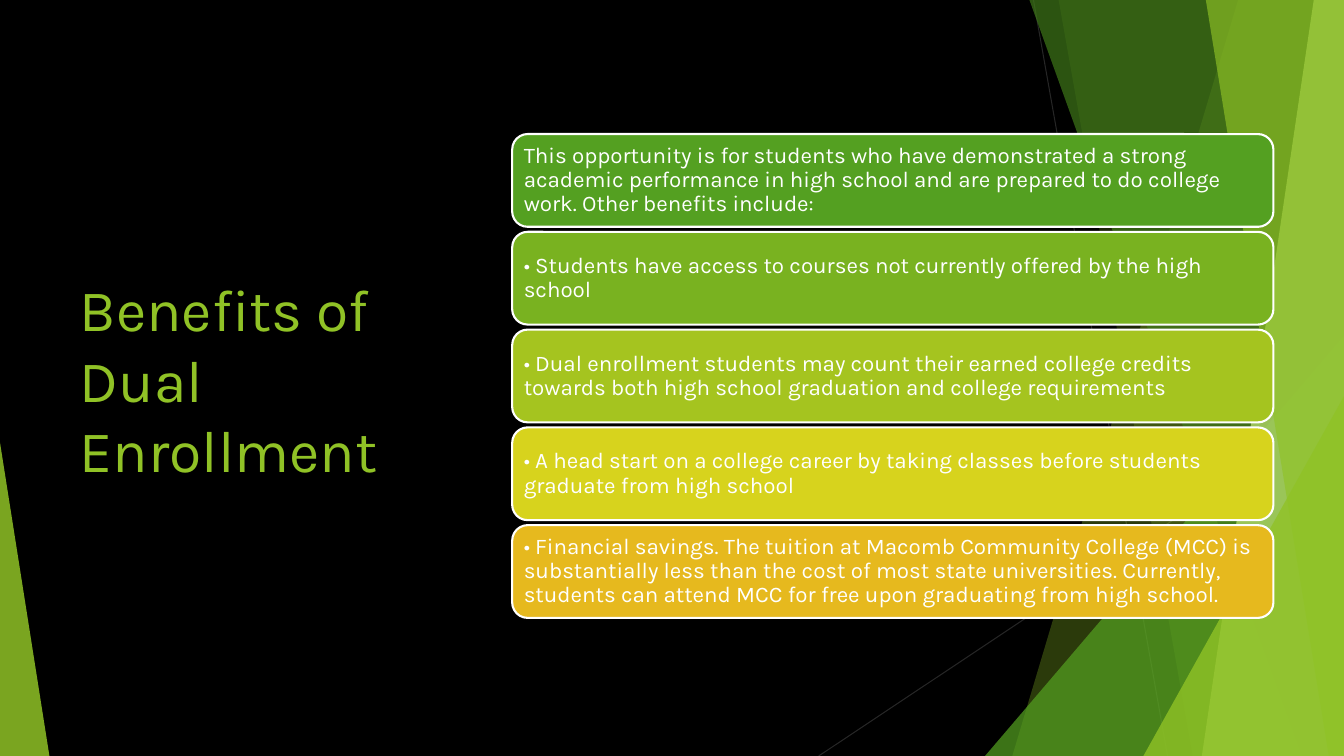
from dataclasses import dataclass

from lxml.etree import SubElement
from pptx import Presentation
from pptx.dml.color import RGBColor as Rgb
from pptx.enum.shapes import MSO_CONNECTOR as Link, MSO_SHAPE as Kind
from pptx.enum.text import MSO_ANCHOR as Anchor, MSO_AUTO_SIZE as Auto, PP_ALIGN as Align
from pptx.oxml.ns import qn
from pptx.shapes.base import BaseShape
from pptx.slide import Slide
from pptx.text.text import TextFrame
from pptx.util import Emu, Pt

SCALE = 9144
WIDE, HIGH = 1333, 750
FONT = "Karla"
HUES = {
    "black": "000000",
    "white": "FFFFFF",
    "gray": "262626",
    "lime": "90C226",
    "green": "54A021",
    "forest": "3F7819",
    "pale": "C0E474",
    "leaf": "79B220",
    "olive": "A5C41F",
    "yellow": "D7D31D",
    "gold": "E6B91E",
}


@dataclass
class Ray:
    x1: int
    y1: int
    x2: int
    y2: int


@dataclass
class Panel:
    top: int
    base: int
    hue: str
    alpha: int


@dataclass
class Wedge:
    left: int
    top: int
    width: int
    apex: int
    hue: str
    alpha: int


@dataclass
class Card:
    hue: str
    text: str


DECOR = [
    Ray(1025, 0, 1158, HIGH),
    Ray(WIDE, 403, 812, HIGH),
    Panel(1228, 1004, "lime", 30),
    Panel(1050, 1183, "lime", 20),
    Wedge(977, 333, 356, 1, "green", 72),
    Panel(1021, 1291, "forest", 70),
    Panel(1303, 1192, "pale", 70),
    Panel(1196, 1318, "lime", 65),
    Wedge(1134, 393, 199, 1, "lime", 80),
    Wedge(0, 439, 49, 0, "lime", 85),
]

CARDS = [
    Card("green", "This opportunity is for students who have demonstrated a strong academic "
         "performance in high school and are prepared to do college work. Other benefits include:"),
    Card("leaf", "• Students have access to courses not currently offered by the high school"),
    Card("olive", "• Dual enrollment students may count their earned college credits towards "
         "both high school graduation and college requirements"),
    Card("yellow", "• A head start on a college career by taking classes before students "
         "graduate from high school"),
    Card("gold", "• Financial savings. The tuition at Macomb Community College (MCC) is "
         "substantially less than the cost of most state universities. Currently, students "
         "can attend MCC for free upon graduating from high school."),
]
CARD_X, CARD_Y, CARD_W, CARD_H, PITCH = 508, 133, 755, 92, 97
INSET = 7


def px(count: int) -> Emu:
    return Emu(count * SCALE)


def color(hue: str) -> Rgb:
    return Rgb.from_string(HUES[hue])


def paint(shape: BaseShape, hue: str, alpha: int = 100) -> None:
    shape.shadow.inherit = False
    shape.fill.solid()
    shape.fill.fore_color.rgb = color(hue)
    if alpha < 100:
        node = next(shape._element.spPr.iter(qn("a:srgbClr")))
        SubElement(node, qn("a:alpha"), val=str(alpha * 1000))


def write(frame: TextFrame, text: str, size: int, hue: str, space: float) -> None:
    frame.word_wrap = True
    frame.auto_size = Auto.NONE
    frame.vertical_anchor = Anchor.MIDDLE
    para = frame.paragraphs[0]
    para.alignment = Align.LEFT
    para.line_spacing = space
    run = para.add_run()
    run.text = text
    run.font.name = FONT
    run.font.size = Pt(size)
    run.font.color.rgb = color(hue)


def draw_ray(slide: Slide, ray: Ray) -> None:
    line = slide.shapes.add_connector(
        Link.STRAIGHT, px(ray.x1), px(ray.y1), px(ray.x2), px(ray.y2))
    line.line.color.rgb = color("gray")
    line.line.width = Pt(0.75)
    SubElement(line._element.spPr, qn("a:effectLst"))


def draw_panel(slide: Slide, panel: Panel) -> None:
    pen = slide.shapes.build_freeform(panel.top, 0, scale=SCALE)
    pen.add_line_segments([(WIDE, 0), (WIDE, HIGH), (panel.base, HIGH)], close=True)
    shape = pen.convert_to_shape()
    paint(shape, panel.hue, panel.alpha)
    shape.line.fill.background()


def draw_wedge(slide: Slide, wedge: Wedge) -> None:
    shape = slide.shapes.add_shape(
        Kind.ISOSCELES_TRIANGLE, px(wedge.left), px(wedge.top),
        px(wedge.width), px(HIGH - wedge.top))
    shape.adjustments[0] = wedge.apex
    paint(shape, wedge.hue, wedge.alpha)
    shape.line.fill.background()


def draw_card(slide: Slide, card: Card, top: int) -> None:
    shape = slide.shapes.add_shape(
        Kind.ROUNDED_RECTANGLE, px(CARD_X), px(top), px(CARD_W), px(CARD_H))
    paint(shape, card.hue)
    shape.line.color.rgb = color("white")
    shape.line.width = Pt(1.5)
    frame = shape.text_frame
    frame.margin_left = frame.margin_right = px(INSET)
    frame.margin_top = frame.margin_bottom = px(INSET)
    write(frame, card.text, 16, "white", 0.9)


def main() -> None:
    deck = Presentation()
    deck.slide_width, deck.slide_height = px(WIDE), px(HIGH)
    slide = deck.slides.add_slide(deck.slide_layouts[5])
    slide.background.fill.solid()
    slide.background.fill.fore_color.rgb = color("black")

    draw = {Ray: draw_ray, Panel: draw_panel, Wedge: draw_wedge}
    for item in DECOR:
        draw[type(item)](slide, item)

    title = slide.shapes.title
    title.left, title.top = px(69), px(70)
    title.width, title.height = px(374), px(611)
    write(title.text_frame, "Benefits of Dual Enrollment", 42, "lime", 1.0)

    for row, card in enumerate(CARDS):
        draw_card(slide, card, CARD_Y + row * PITCH)

    deck.save("out.pptx")


if __name__ == "__main__":
    main()
